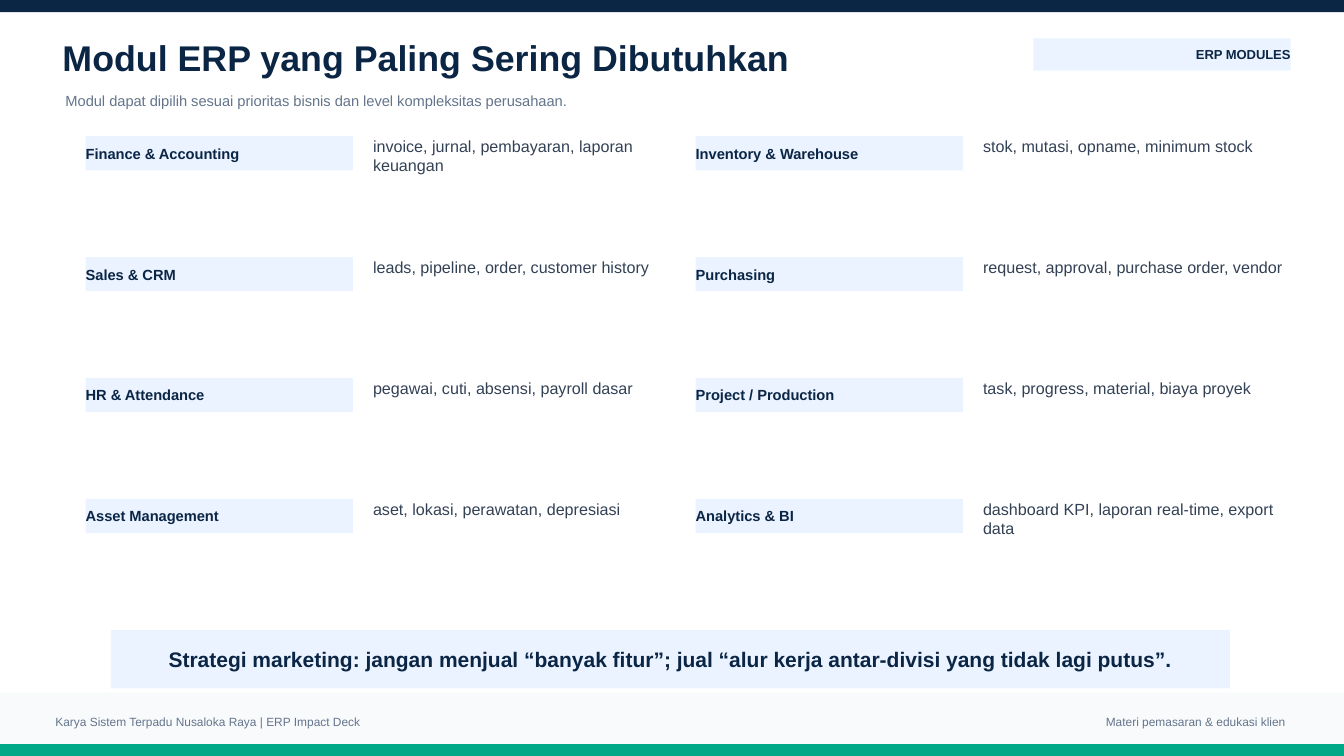
from dataclasses import dataclass

import pptx
import pptx.util
import pptx.dml.color
import pptx.enum.shapes
import pptx.enum.text

Inches = pptx.util.Inches
ALIGN = pptx.enum.text.PP_ALIGN
ANCHOR = pptx.enum.text.MSO_ANCHOR


@dataclass(frozen=True)
class Theme:
    font: str = "Arial"
    navy: str = "0B2545"
    green: str = "00A887"
    pale_blue: str = "EAF3FF"
    pale_grey: str = "F8FAFC"
    muted: str = "64748B"
    body: str = "334155"
    title_size: float = 25.5
    message_size: float = 15
    detail_size: float = 11.5
    label_size: float = 10.5
    tag_size: float = 9.3
    footer_size: float = 8.5


THEME = Theme()
SLIDE_W, SLIDE_H = 13.33, 7.5

MODULES = [
    ("Finance & Accounting", "invoice, jurnal, pembayaran, laporan keuangan"),
    ("Inventory & Warehouse", "stok, mutasi, opname, minimum stock"),
    ("Sales & CRM", "leads, pipeline, order, customer history"),
    ("Purchasing", "request, approval, purchase order, vendor"),
    ("HR & Attendance", "pegawai, cuti, absensi, payroll dasar"),
    ("Project / Production", "task, progress, material, biaya proyek"),
    ("Asset Management", "aset, lokasi, perawatan, depresiasi"),
    ("Analytics & BI", "dashboard KPI, laporan real-time, export data"),
]
COLUMNS = 2
GRID_LEFT, GRID_TOP = 0.85, 1.35
COLUMN_STEP, ROW_STEP = 6.05, 1.2
DETAIL_OFFSET = 2.85


def rgb(color):
    return pptx.dml.color.RGBColor.from_string(color)


def write(sp, text, size, color, bold=False, align=ALIGN.LEFT, anchor=ANCHOR.MIDDLE):
    """Fill a shape's text frame with one paragraph and no margins."""
    tf = sp.text_frame
    tf.word_wrap = True
    tf.vertical_anchor = anchor
    tf.margin_left = tf.margin_top = tf.margin_right = tf.margin_bottom = 0
    p = tf.paragraphs[0]
    p.text = text
    p.alignment = align
    p.font.name = THEME.font
    p.font.size = pptx.util.Pt(size)
    p.font.bold = bold
    p.font.color.rgb = rgb(color)


def add_box(s, x, y, w, h, fill):
    sp = s.shapes.add_shape(pptx.enum.shapes.MSO_SHAPE.RECTANGLE,
                            Inches(x), Inches(y), Inches(w), Inches(h))
    sp.shadow.inherit = False
    sp.fill.solid()
    sp.fill.fore_color.rgb = rgb(fill)
    sp.line.fill.background()
    return sp


def add_text(s, x, y, w, h, text, size, color, **style):
    sp = s.shapes.add_textbox(Inches(x), Inches(y), Inches(w), Inches(h))
    write(sp, text, size, color, **style)


def add_label(s, x, y, w, h, text, size, align=ALIGN.LEFT):
    """Add a pale blue box with bold navy text."""
    sp = add_box(s, x, y, w, h, THEME.pale_blue)
    write(sp, text, size, THEME.navy, bold=True, align=align)


def add_frame(s):
    """Add the top and bottom bars and the footer."""
    add_box(s, 0, 0, SLIDE_W, 0.12, THEME.navy)
    add_box(s, 0, 7.38, SLIDE_W, 0.12, THEME.green)
    add_box(s, 0, 6.87, SLIDE_W, 0.51, THEME.pale_grey)
    add_text(s, 0.55, 7.07, 5.6, 0.18,
             "Karya Sistem Terpadu Nusaloka Raya | ERP Impact Deck",
             THEME.footer_size, THEME.muted)
    add_text(s, 8.45, 7.07, 4.3, 0.18, "Materi pemasaran & edukasi klien",
             THEME.footer_size, THEME.muted, align=ALIGN.RIGHT)


def add_header(s):
    add_text(s, 0.62, 0.36, 9.4, 0.42, "Modul ERP yang Paling Sering Dibutuhkan",
             THEME.title_size, THEME.navy, bold=True)
    add_text(s, 0.65, 0.86, 10.2, 0.28,
             "Modul dapat dipilih sesuai prioritas bisnis dan level kompleksitas perusahaan.",
             THEME.label_size, THEME.muted)
    add_label(s, 10.25, 0.38, 2.55, 0.32, "ERP MODULES", THEME.tag_size, ALIGN.RIGHT)


def add_modules(s):
    for i, (name, detail) in enumerate(MODULES):
        row, column = divmod(i, COLUMNS)
        x = GRID_LEFT + column * COLUMN_STEP
        y = GRID_TOP + row * ROW_STEP
        add_label(s, x, y, 2.65, 0.34, name, THEME.label_size)
        add_text(s, x + DETAIL_OFFSET, y, 3, 0.42, detail,
                 THEME.detail_size, THEME.body, anchor=ANCHOR.TOP)


def main():
    prs = pptx.Presentation()
    prs.slide_width, prs.slide_height = Inches(SLIDE_W), Inches(SLIDE_H)
    s = prs.slides.add_slide(prs.slide_layouts[6])
    add_frame(s)
    add_header(s)
    add_modules(s)
    add_label(s, 1.1, 6.25, 11.1, 0.58,
              "Strategi marketing: jangan menjual “banyak fitur”; "
              "jual “alur kerja antar-divisi yang tidak lagi putus”.",
              THEME.message_size, ALIGN.CENTER)
    prs.save("out.pptx")


if __name__ == "__main__":
    main()
